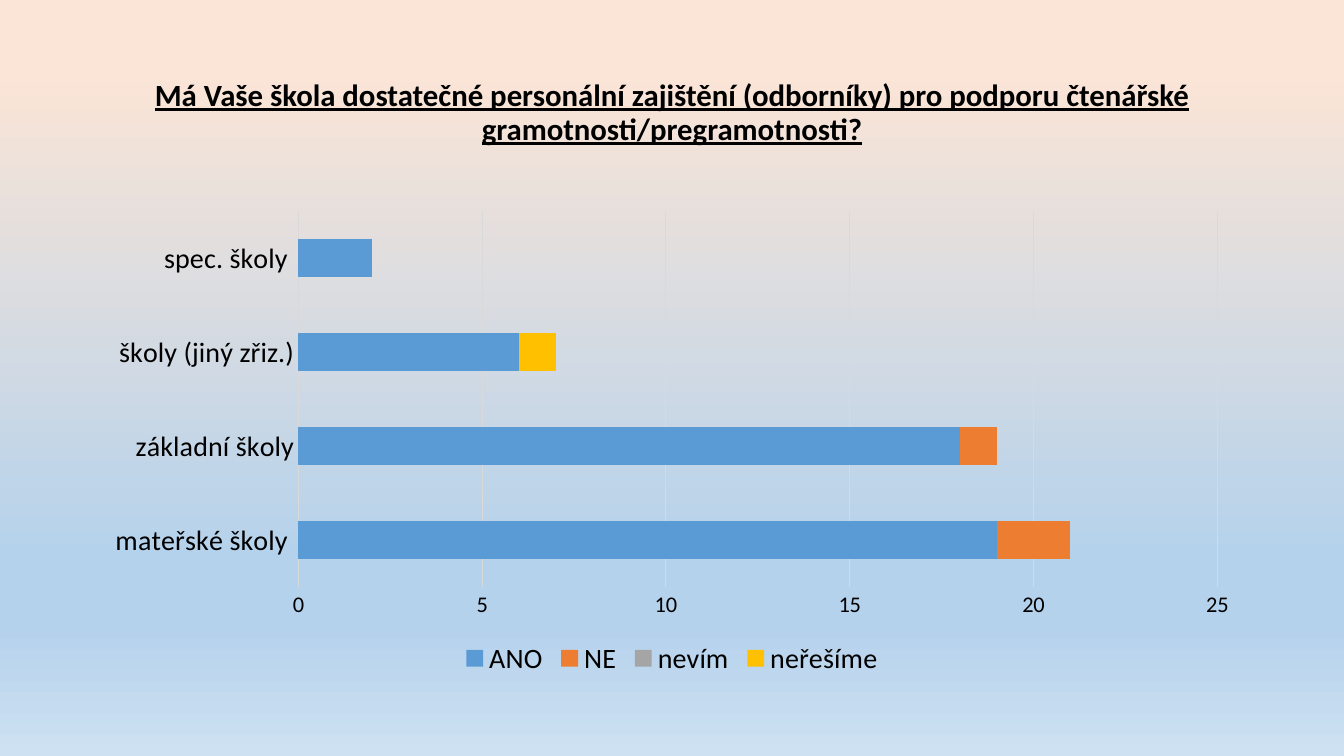
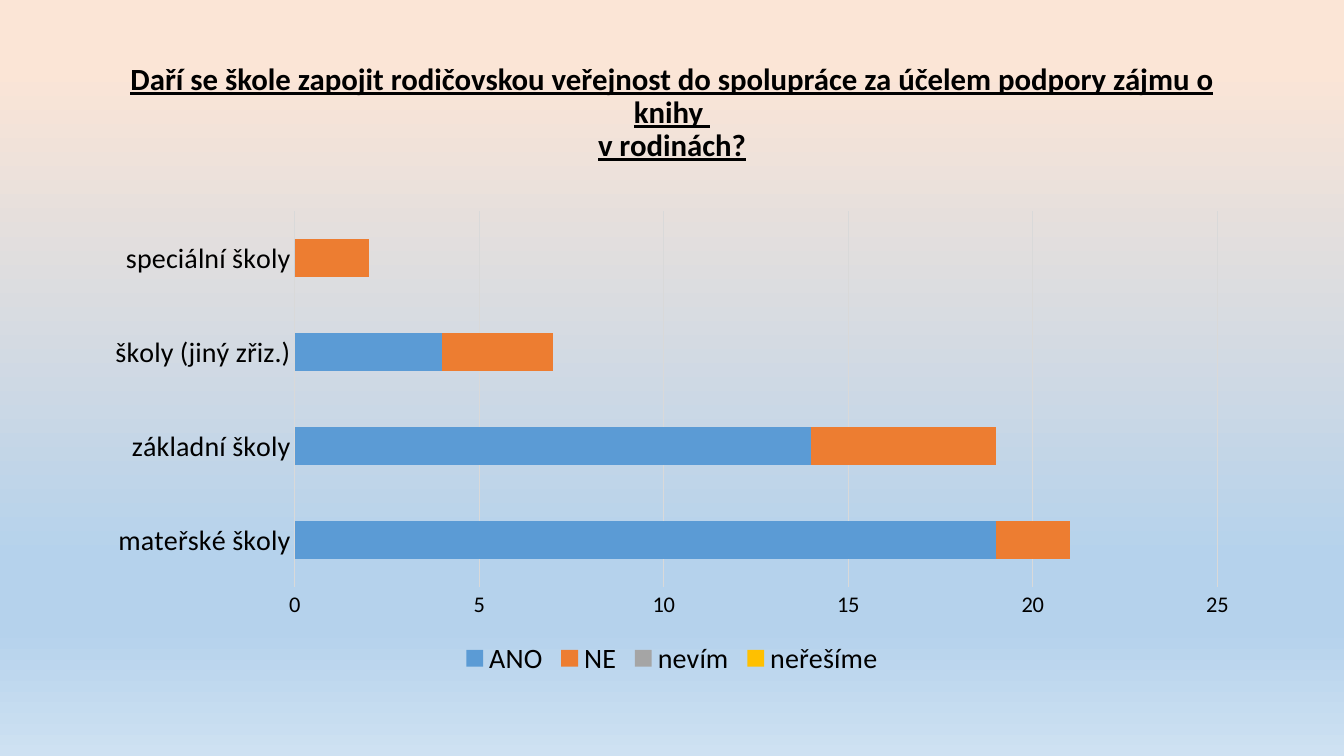
from copy import deepcopy

from pptx import Presentation
from pptx import util as u
from pptx.chart.data import CategoryChartData
from pptx.dml.color import RGBColor
from pptx.enum import chart as ch
from pptx.enum import text

THEME = {
    "background": [(0.09, "FBE5D6"), (0.74, "B5D2EC"), (0.83, "B5D2EC"), (1, "CEE1F2")],
    "ink": "000000",
    "grid": "D9D9D9",
    "grid_width": 0.75,
    "font": "Calibri",
    "chart_font": "Arial",
    "title_size": 22,
    "label_size": 20,
    "value_size": 16,
    "chart_size": 10,
}
ANSWERS = {"ANO": "5B9BD5", "NE": "ED7D31", "nevím": "A5A5A5", "neřešíme": "FFC000"}

# Each row: school type, then one count per answer
QUESTIONS = [
    {
        "title": "Má Vaše škola dostatečné personální zajištění (odborníky) "
                 "pro podporu čtenářské gramotnosti/pregramotnosti?",
        "schools": [
            ("mateřské školy ", 19, 2, 0, 0),
            ("základní školy", 18, 1, 0, 0),
            ("školy (jiný zřiz.)", 6, 0, 0, 1),
            ("spec. školy ", 2, 0, 0, 0),
        ],
    },
    {
        "title": "Daří se škole zapojit rodičovskou veřejnost do spolupráce "
                 "za účelem podpory zájmu o knihy \nv rodinách?",
        "schools": [
            ("mateřské školy", 19, 2, 0, 0),
            ("základní školy", 14, 5, 0, 0),
            ("školy (jiný zřiz.)", 4, 3, 0, 0),
            ("speciální školy", 0, 2, 0, 0),
        ],
    },
]

WIDTH, HEIGHT = u.Inches(13.33), u.Inches(7.5)
CONTENT_WIDTH = u.Inches(11.5)
LEFT = (WIDTH - CONTENT_WIDTH) // 2
TITLE_BOX = (LEFT, u.Inches(0.4), CONTENT_WIDTH, u.Inches(1.45))
CHART_BOX = (LEFT, u.Inches(2), CONTENT_WIDTH, u.Inches(4.76))


def colour(code):
    return RGBColor.from_string(code)


def set_font(font, size, name=THEME["font"], **style):
    font.color.rgb = colour(THEME["ink"])
    for key, value in {"size": u.Pt(size), "name": name, **style}.items():
        setattr(font, key, value)


def set_grid_line(line):
    line.color.rgb = colour(THEME["grid"])
    line.width = u.Pt(THEME["grid_width"])


def paint_background(master):
    fill = master.background.fill
    fill.gradient()
    fill.gradient_angle = 270  # counter-clockwise, so top to bottom
    stop_list = master.element.xpath("p:cSld/p:bg//a:gsLst")[0]
    while len(stop_list) < len(THEME["background"]):
        stop_list.append(deepcopy(stop_list[0]))
    for stop, (position, code) in zip(fill.gradient_stops, THEME["background"]):
        stop.position = position
        stop.color.rgb = colour(code)


def add_title(slide, wording):
    frame = slide.shapes.add_textbox(*TITLE_BOX).text_frame
    frame.word_wrap = True
    frame.vertical_anchor = text.MSO_ANCHOR.MIDDLE
    heading = frame.paragraphs[0]
    heading.text = wording
    heading.alignment = text.PP_ALIGN.CENTER
    heading.line_spacing = 0.9
    for run in heading.runs:
        set_font(run.font, THEME["title_size"], bold=True, underline=True)


def add_answer_chart(slide, schools):
    names, *counts = zip(*schools)
    data = CategoryChartData()
    data.categories = names
    for answer, values in zip(ANSWERS, counts):
        data.add_series(answer, values)
    chart = slide.shapes.add_chart(ch.XL_CHART_TYPE.BAR_STACKED, *CHART_BOX, data).chart
    set_font(chart.font, THEME["chart_size"], THEME["chart_font"])
    chart.has_title = False

    bars = chart.plots[0]
    bars.gap_width, bars.overlap, bars.vary_by_categories = 150, 100, False
    for series, code in zip(bars.series, ANSWERS.values()):
        series.format.fill.solid()
        series.format.fill.fore_color.rgb = colour(code)

    school_axis, count_axis = chart.category_axis, chart.value_axis
    for axis, size in ((school_axis, THEME["label_size"]), (count_axis, THEME["value_size"])):
        axis.major_tick_mark = axis.minor_tick_mark = ch.XL_TICK_MARK.NONE
        set_font(axis.tick_labels.font, size)
    set_grid_line(school_axis.format.line)
    count_axis.format.line.fill.background()
    count_axis.has_major_gridlines = True
    set_grid_line(count_axis.major_gridlines.format.line)

    chart.has_legend = True
    chart.legend.position = ch.XL_LEGEND_POSITION.BOTTOM
    chart.legend.include_in_layout = False
    set_font(chart.legend.font, THEME["label_size"])


def main():
    prs = Presentation()
    prs.slide_width, prs.slide_height = WIDTH, HEIGHT
    paint_background(prs.slide_master)
    for question in QUESTIONS:
        slide = prs.slides.add_slide(prs.slide_layouts[6])
        add_title(slide, question["title"])
        add_answer_chart(slide, question["schools"])
    prs.save("out.pptx")


if __name__ == "__main__":
    main()
